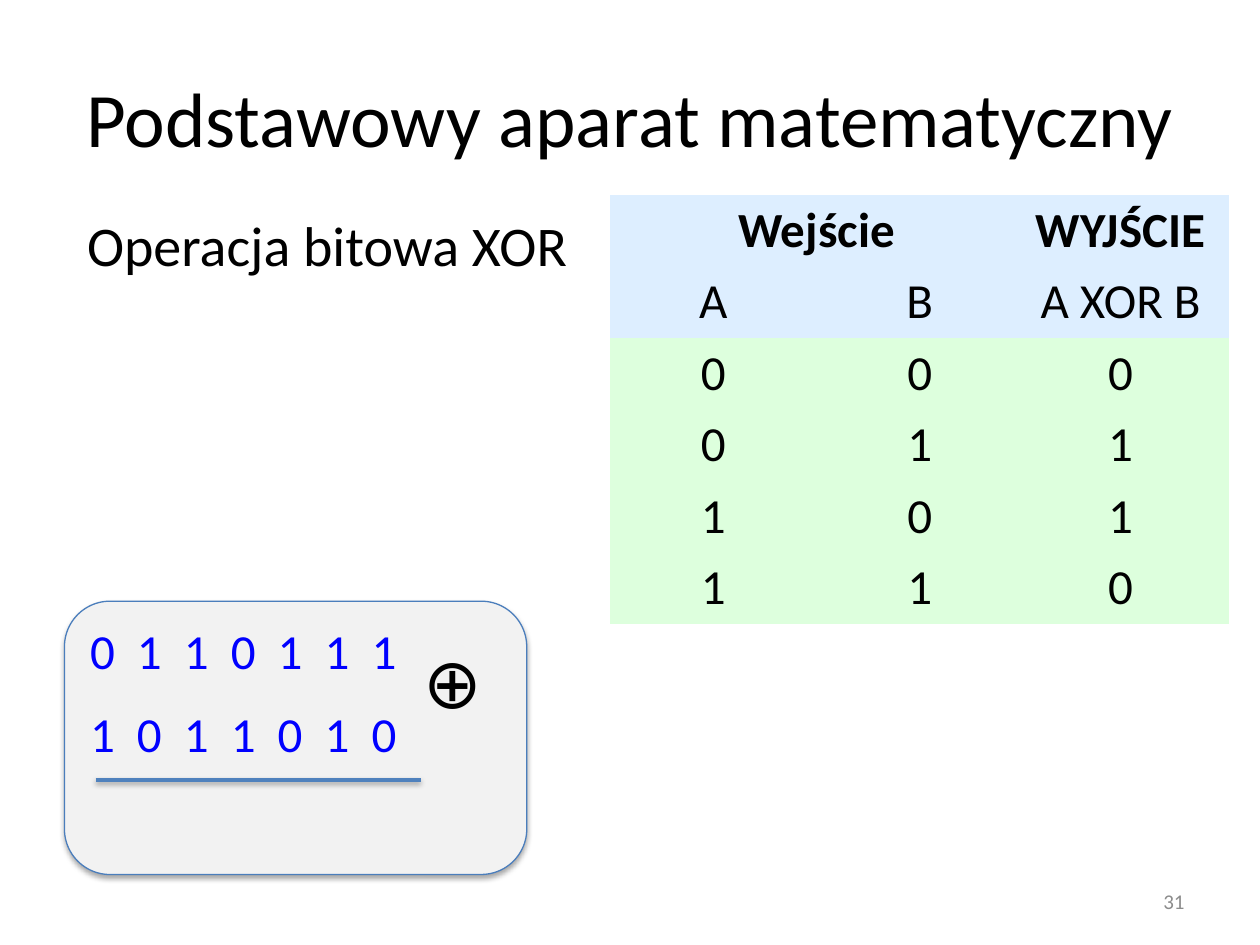
"""Builds a slide on the bitwise XOR operation with its truth table."""
from pptx import Presentation
from pptx import util as u
from pptx import oxml
from pptx.dml.color import RGBColor
from pptx.enum import shapes, text
from pptx.oxml import ns

TITLE = "Podstawowy aparat matematyczny"
SUBTITLE = "Operacja bitowa XOR"
OPERANDS = ["0 1 1 0 1 1 1", "1 0 1 1 0 1 0"]
OPERATOR = "⊕"
PAGE_NUMBER = "31"
HEADINGS = [("Wejście", "", "WYJŚCIE "), ("A", "B", "A XOR B ")]
TRUTH = [(a, b, a ^ b) for a in (0, 1) for b in (0, 1)]

THEME = {
    "font": "Calibri",
    "title": 44, "subtitle": 32, "body": 28, "operator": 40, "number": 12,
    "ink": "000000", "bits": "0000FF", "muted": "8C8C8C",
    "panel": "F2F2F2", "panel_line": "4B7EBC", "rule": "4F81BD",
    "head": "DDEEFF", "data": "DDFFDD",
}
NO_GRID = "{2D5ABB26-0587-4C30-8999-92F81FD0307C}"
ALIGN = text.PP_ALIGN
ANCHOR = text.MSO_ANCHOR


def color(name):
    return RGBColor.from_string(THEME[name])


def place(left, top, width, height):
    return [u.Cm(value) for value in (left, top, width, height)]


def write(para, words, size="body", ink="ink", bold=False, align=ALIGN.LEFT,
          leading=None, tracking=None):
    para.alignment = align
    para.space_before = u.Pt(0)
    if leading:
        para.line_spacing = leading
    span = para.add_run()
    span.text = words
    span.font.name = THEME["font"]
    span.font.size = u.Pt(THEME[size])
    span.font.bold = bold
    span.font.color.rgb = color(ink)
    if tracking:
        span.font._element.set("spc", str(tracking))


def add_text(parent, area, words, wrap=True, anchor=ANCHOR.TOP, **style):
    frame = parent.add_textbox(*place(*area)).text_frame
    frame.word_wrap = wrap
    frame.vertical_anchor = anchor
    write(frame.paragraphs[0], words, **style)


def cast_shadow(shape, distance, opacity):
    properties = shape._element.spPr
    properties.append(oxml.parse_xml(
        f'<a:effectLst {ns.nsdecls("a")}><a:outerShdw blurRad="{u.Pt(3.1)}" '
        f'dist="{u.Pt(distance)}" dir="5400000" rotWithShape="0">'
        f'<a:srgbClr val="000000"><a:alpha val="{opacity * 1000}"/></a:srgbClr>'
        '</a:outerShdw></a:effectLst>'))


def fill_placeholder(holder, area, words, **style):
    holder.left, holder.top, holder.width, holder.height = place(*area)
    holder.text_frame.auto_size = text.MSO_AUTO_SIZE.NONE
    para = holder.text_frame.paragraphs[0]
    write(para, words, **style)
    return para


def add_sum(page):
    group = page.shapes.add_group_shape().shapes
    box = group.add_shape(shapes.MSO_SHAPE.ROUNDED_RECTANGLE,
                          *place(1.3, 12.12, 9.32, 5.51))
    box.fill.solid()
    box.fill.fore_color.rgb = color("panel")
    box.line.color.rgb = color("panel_line")
    box.line.width = u.Pt(0.75)
    cast_shadow(box, 1.8, 35)
    frame = box.text_frame
    frame.word_wrap = True
    frame.vertical_anchor = ANCHOR.TOP
    first, second = frame.paragraphs[0], frame.add_paragraph()
    for para, bits, leading in zip((first, second), OPERANDS, (None, 1.4)):
        write(para, bits, ink="bits", leading=leading, tracking=317)

    rule = group.add_connector(shapes.MSO_CONNECTOR.STRAIGHT,
                               *place(1.93, 15.72, 8.48, 15.72))
    rule.line.color.rgb = color("rule")
    rule.line.width = u.Pt(2)
    cast_shadow(rule, 1.6, 38)
    add_text(group, (8.28, 12.75, 1.22, 1.96), OPERATOR, wrap=False,
             size="operator")


def add_truth_table(page):
    rows = HEADINGS + TRUTH
    frame = page.shapes.add_table(len(rows), 3,
                                  *place(12.3, 3.93, 12.48, 8.64))
    for style in frame._element.iter(ns.qn("a:tableStyleId")):
        style.text = NO_GRID
    table = frame.table
    for r, row in enumerate(rows):
        for c, value in enumerate(row):
            cell = table.cell(r, c)
            cell.fill.solid()
            cell.fill.fore_color.rgb = color(
                "head" if r < len(HEADINGS) else "data")
            cell.vertical_anchor = ANCHOR.MIDDLE
            cell.margin_top = cell.margin_bottom = 0
            if value != "":
                words = f"{value} " if isinstance(value, int) and c == 2 else str(value)
                write(cell.text_frame.paragraphs[0], words, bold=r == 0,
                      align=ALIGN.CENTER)
    table.cell(0, 0).merge(table.cell(0, 1))


def main():
    deck = Presentation()
    deck.slide_width, deck.slide_height = u.Cm(25.4), u.Cm(19.05)
    page = deck.slides.add_slide(deck.slide_layouts[1])
    title, body = page.placeholders
    fill_placeholder(title, (1.27, 0.76, 22.86, 3.18), TITLE, size="title",
                     align=ALIGN.CENTER)
    title.text_frame.vertical_anchor = ANCHOR.MIDDLE
    para = fill_placeholder(body, (1.5, 4.11, 16.21, 1.63), SUBTITLE,
                            size="subtitle")
    settings = para._p.get_or_add_pPr()
    settings.set("marL", "0")
    settings.set("indent", "0")
    settings.append(oxml.parse_xml(f'<a:buNone {ns.nsdecls("a")}/>'))
    add_text(page.shapes, (18.21, 17.65, 5.92, 1.02), PAGE_NUMBER,
             anchor=ANCHOR.MIDDLE, size="number", ink="muted",
             align=ALIGN.RIGHT)
    add_sum(page)
    add_truth_table(page)
    deck.save("out.pptx")


if __name__ == "__main__":
    main()
